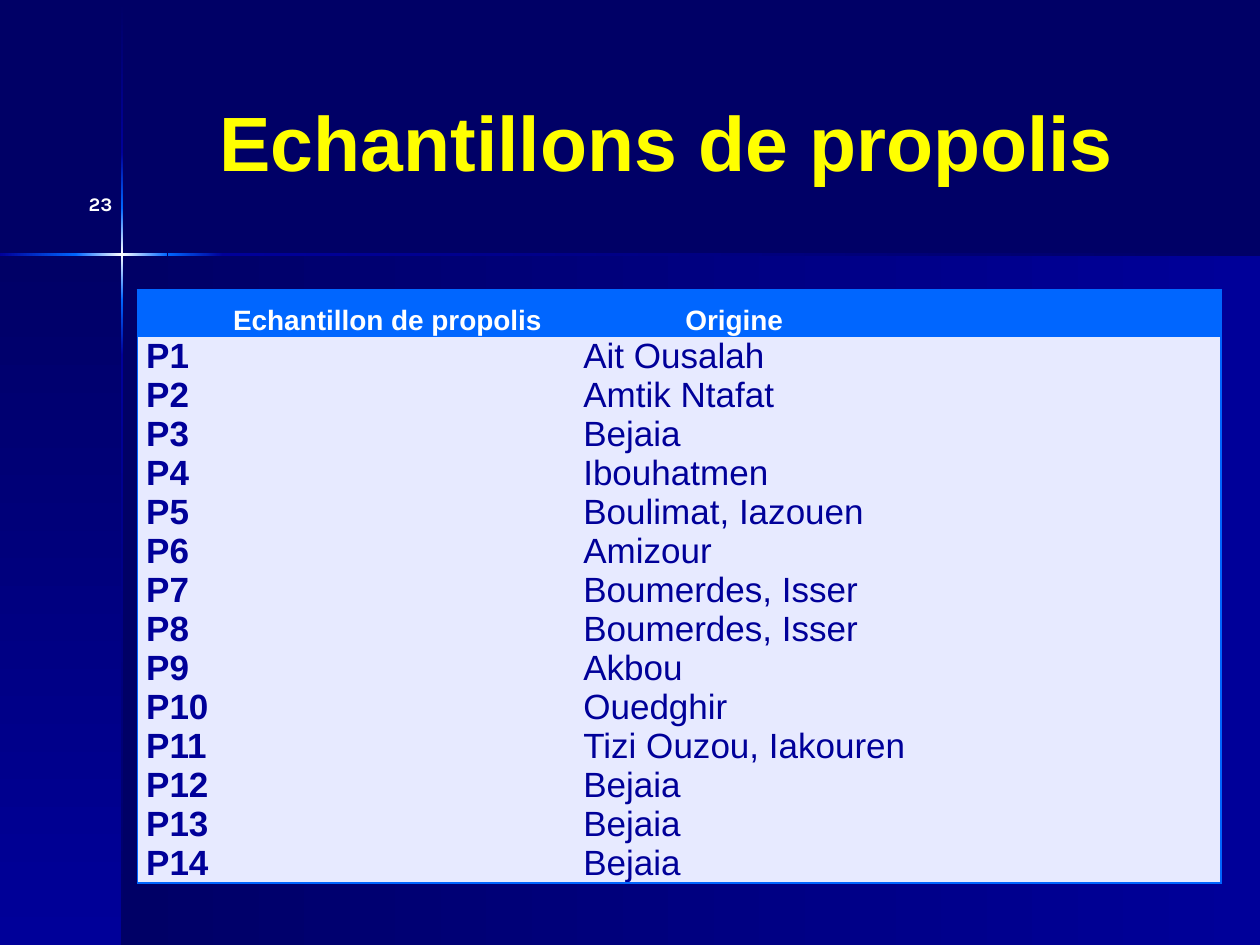
from copy import deepcopy

from lxml import etree
from pptx import Presentation
from pptx.dml.color import RGBColor
from pptx.enum.shapes import MSO_SHAPE
from pptx.enum.text import MSO_ANCHOR, PP_ALIGN
from pptx.oxml.ns import qn
from pptx.util import Inches, Pt

RECTANGLE = MSO_SHAPE.RECTANGLE
LEFT, CENTER, RIGHT = PP_ALIGN.LEFT, PP_ALIGN.CENTER, PP_ALIGN.RIGHT
TOP, MIDDLE = MSO_ANCHOR.TOP, MSO_ANCHOR.MIDDLE

THEME = {
    "night": "000066", "navy": "000099", "blue": "0066FF", "white": "FFFFFF",
    "yellow": "FFFF00", "pale": "E7EAFF",
    "font": "Arial", "number_font": "Karla",
    "title_size": 44, "header_size": 16, "body_size": 20, "number_size": 11,
    "header_pitch": 26.6, "body_pitch": 22.3,
}


def color(name):
    return RGBColor.from_string(THEME[name])


def write(frame, text, size, ink, font="font", bold=False, align=LEFT, pitch=None):
    """Fill a text frame, one paragraph for each line of text."""
    for index, line in enumerate(text.split("\n")):
        para = frame.paragraphs[0] if index == 0 else frame.add_paragraph()
        para.alignment = align
        if pitch:
            para.line_spacing = Pt(THEME[pitch])
        span = para.add_run()
        span.text = line
        span.font.name = THEME[font]
        span.font.size = Pt(THEME[size])
        span.font.bold = bold
        span.font.color.rgb = color(ink)


deck = Presentation()
deck.slide_width, deck.slide_height = Inches(10), Inches(7.5)
page = deck.slides.add_slide(deck.slide_layouts[5])
page.background.fill.solid()
page.background.fill.fore_color.rgb = color("night")

# Background panels and the glowing cross: left, top, width, height, angle, colours
ACROSS, DOWN = 0, 270
cross_x, cross_y, beam = 0.96, 2.01, 0.02
panels = [
    (0.97, 2.02, 9.03, 5.48, ACROSS, ("night", "navy")),
    (0, 2.02, 0.97, 5.48, DOWN, ("night", "navy")),
]
vertical_beams = [
    (0.01, 1.21, ("night", "navy")),
    (2.82, 7.5, ("navy", "night")),
    (2.38, 2.82, ("blue", "navy")),
    (1.21, 1.65, ("navy", "blue")),
    (1.65, 2.38, ("blue", "white", "blue")),
]
horizontal_beams = [
    (1.77, 10, ("navy", "night")),
    (0, 0.61, ("navy", "blue")),
    (1.33, 1.77, ("blue", "navy")),
    (0.6, 1.33, ("blue", "white", "blue")),
]
panels += [(cross_x, start, beam, end - start, DOWN, stops)
           for start, end, stops in vertical_beams]
panels += [(start, cross_y, end - start, beam, ACROSS, stops)
           for start, end, stops in horizontal_beams]

backdrop = page.shapes.add_group_shape()
for left, top, width, height, angle, stops in panels:
    panel = backdrop.shapes.add_shape(
        RECTANGLE, Inches(left), Inches(top), Inches(width), Inches(height))
    panel.shadow.inherit = False
    panel.line.fill.background()
    panel.fill.gradient()
    panel.fill.gradient_angle = angle
    if len(stops) == 3:
        stop_list = panel._element.spPr.find(".//" + qn("a:gsLst"))
        stop_list.insert(1, deepcopy(stop_list[0]))
    for index, stop in enumerate(panel.fill.gradient_stops):
        stop.position = index / (len(stops) - 1)
        stop.color.rgb = color(stops[index])

# Table: one header row, and one tall row that holds all the samples
origins = [
    "Ait Ousalah", "Amtik Ntafat", "Bejaia", "Ibouhatmen", "Boulimat, Iazouen",
    "Amizour", "Boumerdes, Isser", "Boumerdes, Isser", "Akbou", "Ouedghir",
    "Tizi Ouzou, Iakouren", "Bejaia", "Bejaia", "Bejaia",
]
samples = [f"P{number}" for number in range(1, len(origins) + 1)]
column_widths, row_heights = (3.47, 5.13), (0.37, 4.34)
table = page.shapes.add_table(
    2, 2, Inches(1.09), Inches(2.3),
    Inches(sum(column_widths)), Inches(sum(row_heights))).table
table.first_row = table.horz_banding = False
for column, width in zip(table.columns, column_widths):
    column.width = Inches(width)
for row, height in zip(table.rows, row_heights):
    row.height = Inches(height)

header = {"size": "header_size", "ink": "white", "bold": True, "pitch": "header_pitch"}
body = {"size": "body_size", "ink": "navy", "pitch": "body_pitch"}
inset, indent, origin_shift = 0.07, 0.5, 0.31
cells = [
    (0, 0, "Echantillon de propolis", inset + indent, "blue", {**header, "align": CENTER}),
    (0, 1, "Origine", inset + indent + origin_shift, "blue", header),
    (1, 0, "\n".join(samples), inset, "pale", {**body, "bold": True}),
    (1, 1, "\n".join(origins), inset, "pale", body),
]
for row, column, text, margin, fill, style in cells:
    cell = table.cell(row, column)
    cell.margin_left, cell.margin_right = Inches(margin), Inches(inset)
    cell.margin_top = cell.margin_bottom = 0
    cell.vertical_anchor = TOP
    write(cell.text_frame, text, **style)
    inner_side = "lnR" if column == 0 else "lnL"
    properties = cell._tc.get_or_add_tcPr()
    for side in ("lnL", "lnR", "lnT", "lnB"):
        edge = etree.SubElement(properties, qn("a:" + side), w=str(Pt(1)))
        if side == inner_side:
            etree.SubElement(edge, qn("a:noFill"))
        else:
            paint = etree.SubElement(edge, qn("a:solidFill"))
            etree.SubElement(paint, qn("a:srgbClr"), val=THEME["blue"])
    cell.fill.solid()
    cell.fill.fore_color.rgb = color(fill)

title = page.shapes.title
title.left, title.top = Inches(1.17), Inches(0.33)
title.width, title.height = Inches(8.25), Inches(1.57)
title.text_frame.vertical_anchor = MIDDLE
write(title.text_frame, "Echantillons de propolis", size="title_size", ink="yellow",
      bold=True, align=CENTER)

number_box = page.shapes.add_textbox(Inches(-1.09), Inches(1.48), Inches(2.08), Inches(0.5))
number_box.text_frame.word_wrap = True
write(number_box.text_frame, "23", size="number_size", ink="white", font="number_font",
      bold=True, align=RIGHT)

deck.save("out.pptx")
